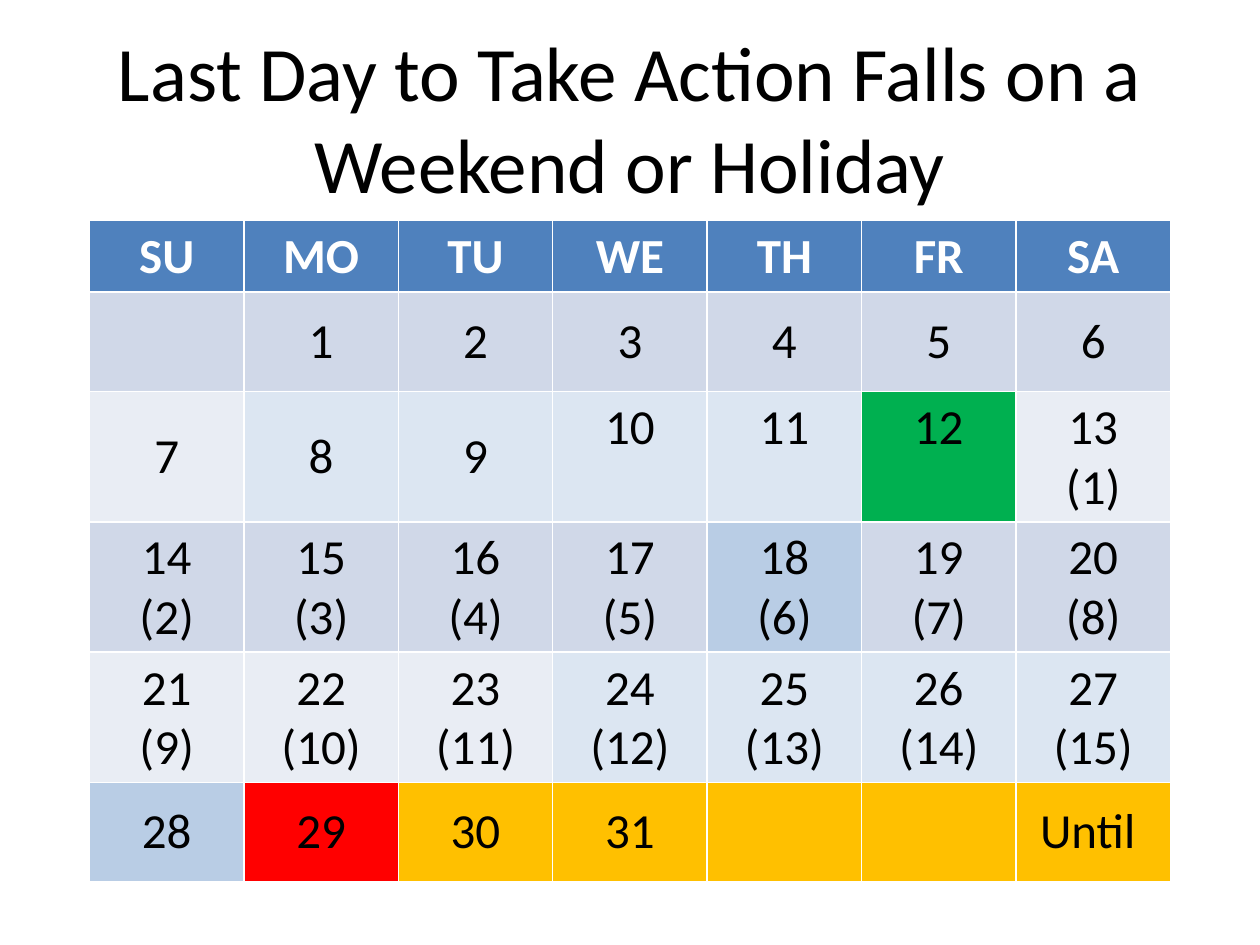
from pptx import Presentation
from pptx.dml.color import RGBColor
from pptx.enum.text import MSO_ANCHOR, PP_ALIGN
from pptx.util import Inches, Pt

CENTER = PP_ALIGN.CENTER
MIDDLE, TOP = MSO_ANCHOR.MIDDLE, MSO_ANCHOR.TOP

BLACK = RGBColor(0x00, 0x00, 0x00)
WHITE = RGBColor(0xFF, 0xFF, 0xFF)
HEADER_BLUE = RGBColor(0x4F, 0x81, 0xBD)
BAND_DARK = RGBColor(0xD0, 0xD8, 0xE8)
BAND_LIGHT = RGBColor(0xE9, 0xED, 0xF4)
PALE_BLUE = RGBColor(0xDC, 0xE6, 0xF2)
MID_BLUE = RGBColor(0xB9, 0xCD, 0xE5)
GREEN = RGBColor(0x00, 0xB0, 0x50)
RED = RGBColor(0xFF, 0x00, 0x00)
AMBER = RGBColor(0xFF, 0xC0, 0x00)

FONT = "Calibri"
WEEKDAYS = ["SU", "MO", "TU", "WE", "TH", "FR", "SA"]
WEEKS = 5
LAST_DAY = 31
COUNT_START, COUNT_END = 13, 27  # days that carry a running count
RAISED_DAYS = (10, 11, 12)       # numbers level with the counted day beside them

# Fills that replace the row banding, by position in the month
DAY_FILLS = {
    **dict.fromkeys((8, 9, 10, 11, 24, 25, 26, 27), PALE_BLUE),
    **dict.fromkeys((18, 28), MID_BLUE),
    **dict.fromkeys(range(30, 35), AMBER),
    12: GREEN,
    29: RED,
}


def write_text(frame, lines, size=28, color=BLACK, bold=False):
    """Write centred lines, one paragraph each."""
    for index, line in enumerate(lines):
        para = frame.paragraphs[0] if index == 0 else frame.add_paragraph()
        para.alignment = CENTER
        span = para.add_run()
        span.text = line
        span.font.name = FONT
        span.font.size = Pt(size)
        span.font.bold = bold
        span.font.color.rgb = color


def add_title(page, text, left, top, width, height):
    box = page.shapes.add_textbox(left, top, width, height)
    box.text_frame.word_wrap = True
    box.text_frame.vertical_anchor = MIDDLE
    write_text(box.text_frame, [text], size=44)


def fill_cell(cell, lines, fill, anchor=MIDDLE, **text_format):
    cell.fill.solid()
    cell.fill.fore_color.rgb = fill
    cell.vertical_anchor = anchor
    write_text(cell.text_frame, lines, **text_format)


def day_lines(day):
    if COUNT_START <= day <= COUNT_END:
        return [str(day), f"({day - COUNT_START + 1})"]
    if 1 <= day <= LAST_DAY:
        return [str(day)]
    return ["Until "] if day == WEEKS * len(WEEKDAYS) - 1 else []


def add_calendar(page, left, top, width, height):
    columns = len(WEEKDAYS)
    frame = page.shapes.add_table(WEEKS + 1, columns, left, top, width, height)
    table = frame.table

    # Row heights are minimums: two-line weeks grow to fit their text
    for index, row in enumerate(table.rows):
        row.height = Inches(0.79 if index else 0.37)
    frame.height = height

    # Weekday header
    for column, name in enumerate(WEEKDAYS):
        fill_cell(table.cell(0, column), [name], HEADER_BLUE, color=WHITE, bold=True)

    # Days of the month, which begins on a Monday
    for day in range(WEEKS * columns):
        week, column = divmod(day, columns)
        band = BAND_LIGHT if week % 2 else BAND_DARK
        fill_cell(table.cell(week + 1, column), day_lines(day),
                  DAY_FILLS.get(day, band),
                  anchor=TOP if day in RAISED_DAYS else MIDDLE)


def main():
    deck = Presentation()
    deck.slide_width, deck.slide_height = Inches(10), Inches(7.5)
    page = deck.slides.add_slide(deck.slide_layouts[6])
    add_title(page, "Last Day to Take Action Falls on a Weekend or Holiday",
              Inches(0.5), Inches(0.3), Inches(9), Inches(1.25))
    add_calendar(page, Inches(0.71), Inches(1.75), Inches(8.58), Inches(5.24))
    deck.save("out.pptx")


if __name__ == "__main__":
    main()
